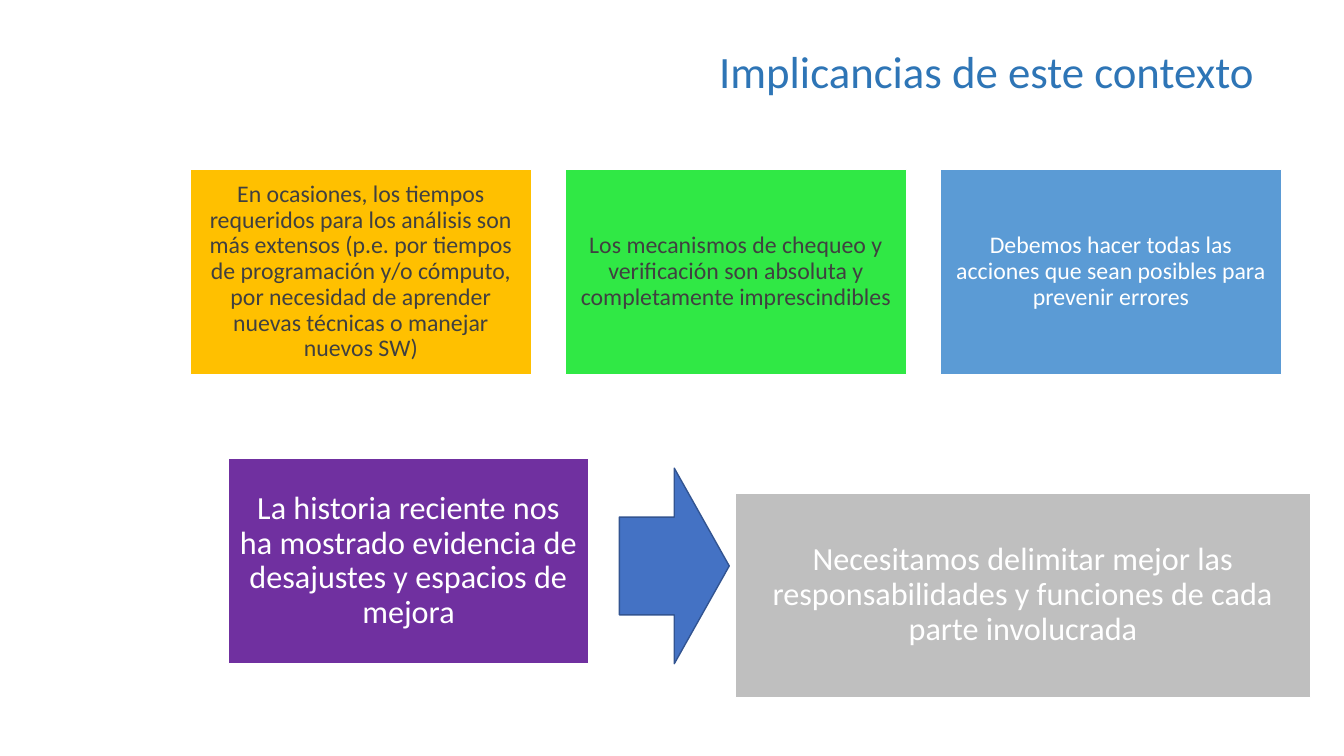
from pptx import Presentation
from pptx.dml.color import RGBColor
from pptx.enum.shapes import MSO_SHAPE
from pptx.enum.text import MSO_ANCHOR, PP_ALIGN
from pptx.util import Pt

RECTANGLE, DOWN_ARROW = MSO_SHAPE.RECTANGLE, MSO_SHAPE.DOWN_ARROW
TOP, MIDDLE = MSO_ANCHOR.TOP, MSO_ANCHOR.MIDDLE
CENTER, RIGHT = PP_ALIGN.CENTER, PP_ALIGN.RIGHT
WHITE, DARK_GRAY = "FFFFFF", "404040"


def color(hex_code):
    return RGBColor.from_string(hex_code)


def write(shape, text, size, ink, align=CENTER, anchor=MIDDLE, inset=7.2, inset_y=None):
    frame = shape.text_frame
    frame.word_wrap = True
    frame.vertical_anchor = anchor
    frame.margin_left = frame.margin_right = Pt(inset)
    frame.margin_top = frame.margin_bottom = Pt(inset if inset_y is None else inset_y)
    para = frame.paragraphs[0]
    para.alignment = align
    para.line_spacing = 0.9
    span = para.add_run()
    span.text = text
    span.font.name = "Calibri"
    span.font.size = Pt(size)
    span.font.color.rgb = color(ink)


class SlideBuilder:
    def __init__(self, page):
        self.page = page

    def title(self, text, left, top, width, height):
        box = self.page.shapes.add_textbox(Pt(left), Pt(top), Pt(width), Pt(height))
        write(box, text, 32, "2E75B6", align=RIGHT, anchor=TOP, inset_y=3.6)

    def shape(self, kind, left, top, width, height, fill, line=WHITE):
        shape = self.page.shapes.add_shape(kind, Pt(left), Pt(top), Pt(width), Pt(height))
        shape.shadow.inherit = False
        shape.fill.solid()
        shape.fill.fore_color.rgb = color(fill)
        shape.line.color.rgb = color(line)
        shape.line.width = Pt(1)
        return shape

    def card(self, text, left, top, width, fill, size, ink=WHITE, inset=7.2):
        box = self.shape(RECTANGLE, left, top, width, 146.4, fill)
        write(box, text, size, ink, inset=inset)


def main():
    deck = Presentation()
    deck.slide_width, deck.slide_height = Pt(960), Pt(540)
    builder = SlideBuilder(deck.slides.add_slide(deck.slide_layouts[6]))

    builder.title("Implicancias de este contexto", 123, 31.7, 780, 46.8)

    implications = [
        ("En ocasiones, los tiempos requeridos para los análisis son más extensos "
         "(p.e. por tiempos de programación y/o cómputo, por necesidad de aprender "
         "nuevas técnicas o manejar nuevos SW)", "FFC000", DARK_GRAY),
        ("Los mecanismos de chequeo y verificación son absoluta y completamente "
         "imprescindibles", "30E845", DARK_GRAY),
        ("Debemos hacer todas las acciones que sean posibles para prevenir errores",
         "5B9BD5", WHITE),
    ]
    for column, (text, fill, ink) in enumerate(implications):
        builder.card(text, 136 + column * 267.9, 121, 243.5, fill, 17, ink, inset=5)

    builder.card("Necesitamos delimitar mejor las responsabilidades y funciones de cada "
                 "parte involucrada", 525.6, 352, 410.4, "BFBFBF", 23)
    arrow = builder.shape(DOWN_ARROW, 411.8, 365, 139.7, 78.5, "4472C4", "325491")
    arrow.rotation = 270
    builder.card("La historia reciente nos ha mostrado evidencia de desajustes y espacios "
                 "de mejora", 163.4, 327.6, 257, "7030A0", 23)

    deck.save("out.pptx")


if __name__ == "__main__":
    main()
